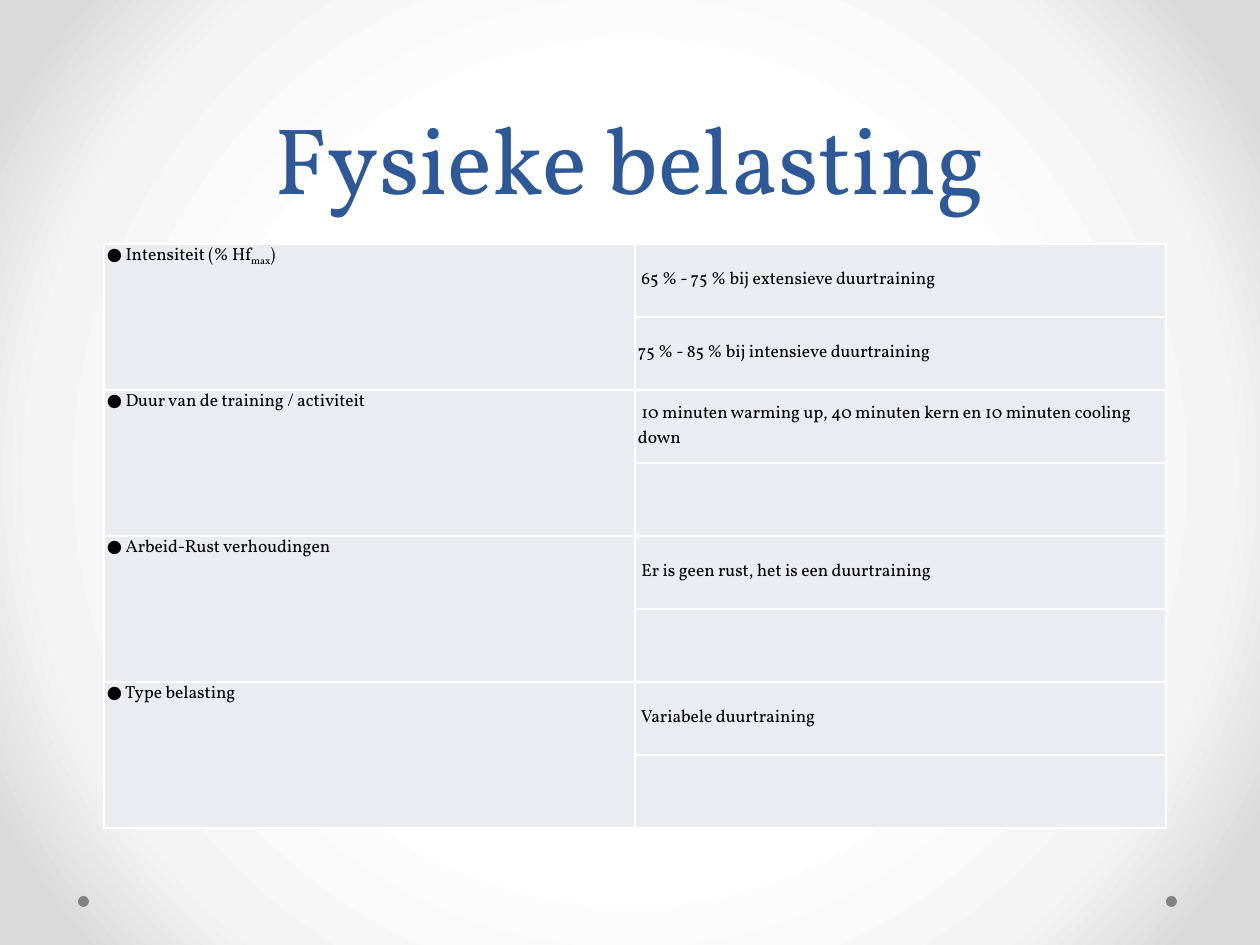
from lxml.etree import SubElement
from pptx import Presentation
from pptx.dml.color import RGBColor
from pptx.enum.shapes import MSO_SHAPE
from pptx.enum.text import MSO_ANCHOR, PP_ALIGN
from pptx.oxml import parse_xml
from pptx.oxml.ns import nsdecls, qn
from pptx.util import Pt

TITLE = "Fysieke belasting"
TOPICS = [
    ([("● Intensiteit (% Hf", False), ("max", True), (")", False)],
     [" 65 % - 75 % bij extensieve duurtraining",
      "75 % - 85 % bij intensieve duurtraining"]),
    ([("● Duur van de training / activiteit", False)],
     [" 10 minuten warming up, 40 minuten kern en 10 minuten cooling down", ""]),
    ([("● Arbeid-Rust verhoudingen", False)],
     [" Er is geen rust, het is een duurtraining", ""]),
    ([("● Type belasting", False)],
     [" Variabele duurtraining", ""]),
]
BACKDROP_STOPS = [(50, RGBColor(0xFF, 0xFF, 0xFF)),
                  (76, RGBColor(0xF4, 0xF4, 0xF4)),
                  (92, RGBColor(0xDA, 0xDA, 0xDA))]
BLUE = RGBColor(0x2F, 0x58, 0x97)
BLACK = RGBColor(0x00, 0x00, 0x00)
GREY = RGBColor(0x80, 0x80, 0x80)
WHITE = RGBColor(0xFF, 0xFF, 0xFF)
CELL_FILL = RGBColor(0xEA, 0xEC, 0xF2)
FONT = "Vollkorn"

PX = 914400 // 126
SLIDE_W, SLIDE_H = 1260, 945
TABLE_LEFT, TABLE_TOP = 104, 244
COLUMN_W, ROW_H = 531, 73
DOT_LEFTS, DOT_TOP, DOT_SIZE = (78, 1166), 896, 11


def px(length):
    return round(length * PX)


def paint_backdrop(slide):
    slide.background.fill.solid()
    solid = slide.element.find(".//" + qn("p:bgPr"))[0]
    stops = "".join(
        f'<a:gs pos="{position * 1000}"><a:srgbClr val="{color}"/></a:gs>'
        for position, color in BACKDROP_STOPS)
    gradient = parse_xml(
        f'<a:gradFill {nsdecls("a")} rotWithShape="1"><a:gsLst>{stops}</a:gsLst>'
        '<a:path path="circle"><a:fillToRect l="50000" t="50000" r="50000" b="50000"/>'
        '</a:path></a:gradFill>')
    solid.getparent().replace(solid, gradient)


def style_font(font, size, color):
    font.name = FONT
    font.size = Pt(size)
    font.color.rgb = color


def style_cell(cell):
    cell.margin_left = cell.margin_right = px(3)
    cell.margin_top = cell.margin_bottom = 0
    properties = cell._tc.get_or_add_tcPr()
    for side in ("a:lnL", "a:lnR", "a:lnT", "a:lnB"):
        border = SubElement(properties, qn(side), w=str(Pt(1)))
        SubElement(SubElement(border, qn("a:solidFill")), qn("a:srgbClr"), val=str(WHITE))
    cell.fill.solid()
    cell.fill.fore_color.rgb = CELL_FILL


def fill_topic(cell, parts):
    paragraph = cell.text_frame.paragraphs[0]
    paragraph.space_before = Pt(6)
    for text, subscript in parts:
        run = paragraph.add_run()
        run.text = text
        style_font(run.font, 10, BLACK)
        if subscript:
            run.font._element.set("baseline", "-25000")


def fill_detail(cell, text):
    cell.vertical_anchor = MSO_ANCHOR.MIDDLE
    paragraph = cell.text_frame.paragraphs[0]
    paragraph.text = text
    paragraph.space_after = Pt(3)
    for run in paragraph.runs:
        style_font(run.font, 10, BLACK)


def add_title(slide):
    title = slide.shapes.add_textbox(px(63), 0, px(1134), px(220))
    frame = title.text_frame
    frame.word_wrap = True
    frame.vertical_anchor = MSO_ANCHOR.BOTTOM
    frame.text = TITLE
    paragraph = frame.paragraphs[0]
    paragraph.alignment = PP_ALIGN.CENTER
    paragraph.line_spacing = Pt(58)
    style_font(paragraph.runs[0].font, 54, BLUE)


def add_topics(slide):
    row_count = sum(len(details) for _, details in TOPICS)
    table = slide.shapes.add_table(
        row_count, 2, px(TABLE_LEFT), px(TABLE_TOP),
        px(2 * COLUMN_W), px(row_count * ROW_H)).table
    table.first_row = table.horz_banding = False
    for cell in table.iter_cells():
        style_cell(cell)
    row = 0
    for parts, details in TOPICS:
        table.cell(row, 0).merge(table.cell(row + len(details) - 1, 0))
        fill_topic(table.cell(row, 0), parts)
        for detail in details:
            fill_detail(table.cell(row, 1), detail)
            row += 1


def add_dots(slide):
    for left in DOT_LEFTS:
        dot = slide.shapes.add_shape(
            MSO_SHAPE.OVAL, px(left), px(DOT_TOP), px(DOT_SIZE), px(DOT_SIZE))
        dot.shadow.inherit = False
        dot.fill.solid()
        dot.fill.fore_color.rgb = GREY
        dot.line.fill.background()


def main():
    presentation = Presentation()
    presentation.slide_width, presentation.slide_height = px(SLIDE_W), px(SLIDE_H)
    slide = presentation.slides.add_slide(presentation.slide_layouts[6])
    paint_backdrop(slide)
    add_dots(slide)
    add_title(slide)
    add_topics(slide)
    presentation.save("out.pptx")


if __name__ == "__main__":
    main()
